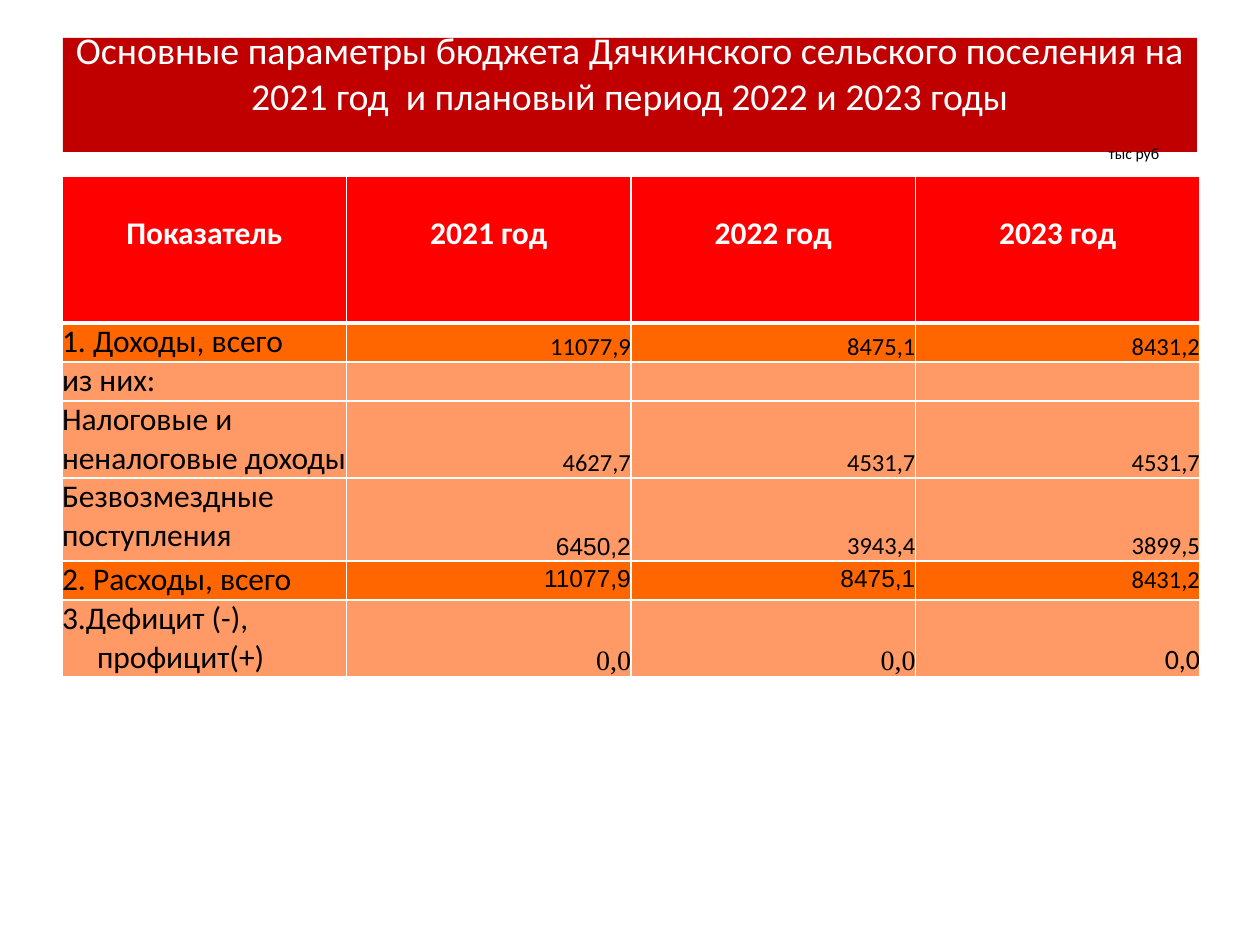
from lxml.etree import SubElement
from pptx import Presentation
from pptx.dml.color import RGBColor
from pptx.enum.shapes import MSO_SHAPE
from pptx.enum.text import MSO_ANCHOR, PP_ALIGN
from pptx.oxml.ns import qn
from pptx.util import Pt

EMU_PER_PX = 914400 / 126
COLORS = {
    "title": "C00000",
    "header": "FF0000",
    "total": "FF6600",
    "detail": "FF9966",
    "white": "FFFFFF",
    "black": "000000",
}


def px(length):
    return round(length * EMU_PER_PX)


def add_span(paragraph, text, size, color, font="Calibri", bold=False):
    span = paragraph.add_run()
    span.text = text
    span.font.size = Pt(size)
    span.font.name = font
    span.font.bold = bold
    span.font.color.rgb = RGBColor.from_string(COLORS[color])


deck = Presentation()
deck.slide_width, deck.slide_height = px(1260), px(945)
page = deck.slides.add_slide(deck.slide_layouts[6])

# Title banner with the unit of measure
banner = page.shapes.add_shape(MSO_SHAPE.RECTANGLE, px(63), px(38), px(1134), px(114))
banner.shadow.inherit = False
banner.fill.solid()
banner.fill.fore_color.rgb = RGBColor.from_string(COLORS["title"])
banner.line.fill.background()
frame = banner.text_frame
frame.word_wrap = True
frame.vertical_anchor = MSO_ANCHOR.MIDDLE
frame.margin_left = frame.margin_right = px(12)
title = frame.paragraphs[0]
title.alignment = PP_ALIGN.CENTER
add_span(title, "Основные параметры бюджета Дячкинского сельского поселения "
         "на 2021 год  и плановый период 2022 и 2023 годы", 21.6, "white")
unit = frame.add_paragraph()
unit.alignment = PP_ALIGN.CENTER
unit.space_before = Pt(15)
unit._p.get_or_add_pPr().set("marL", str(px(1008)))
add_span(unit, "тыс руб", 9, "black")

# Budget table: label, values, fill, value fonts, value size
HEADINGS = ["Показатель", "2021 год", "2022 год", "2023 год"]
CALIBRI = ["Calibri"] * 3
BUDGET = [
    ("1. Доходы, всего", ["11077,9", "8475,1", "8431,2"], "total", CALIBRI, 14),
    ("из них:", [], "detail", CALIBRI, 14),
    ("Налоговые и неналоговые доходы", ["4627,7", "4531,7", "4531,7"],
     "detail", CALIBRI, 14),
    ("Безвозмездные поступления", ["6450,2", "3943,4", "3899,5"],
     "detail", ["Arial", "Calibri", "Calibri"], 14),
    ("2. Расходы, всего", ["11077,9", "8475,1", "8431,2"],
     "total", ["Arial", "Arial", "Calibri"], 14),
    ("3.Дефицит (-),\nпрофицит(+)", ["0,0", "0,0", "0,0"],
     "detail", ["Times New Roman", "Times New Roman", "Calibri"], 16),
]
ROW_HEIGHTS = [147, 39, 39, 77, 83, 39, 76]

table = page.shapes.add_table(len(ROW_HEIGHTS), len(HEADINGS), px(62), px(176),
                              px(1138), px(sum(ROW_HEIGHTS))).table
for row, height in zip(table.rows, ROW_HEIGHTS):
    row.height = px(height)

for column, heading in enumerate(HEADINGS):
    cell = table.cell(0, column)
    paragraph = cell.text_frame.paragraphs[0]
    paragraph.alignment = PP_ALIGN.CENTER
    add_span(paragraph, heading, 18, "white", bold=True)

for row, (label, values, fill, fonts, size) in enumerate(BUDGET, start=1):
    frame = table.cell(row, 0).text_frame
    for index, line in enumerate(label.split("\n")):
        paragraph = frame.add_paragraph() if index else frame.paragraphs[0]
        if index:
            paragraph._p.get_or_add_pPr().set("marL", str(px(35)))
        add_span(paragraph, line, 18, "black")
    for column, (value, font) in enumerate(zip(values, fonts), start=1):
        cell = table.cell(row, column)
        if not label.startswith("2."):
            cell.vertical_anchor = MSO_ANCHOR.BOTTOM
        paragraph = cell.text_frame.paragraphs[0]
        paragraph.alignment = PP_ALIGN.RIGHT
        paragraph.line_spacing = 1.15
        add_span(paragraph, value, size, "black", font)

# Insets, borders and fills of every cell
fills = ["header"] + [entry[2] for entry in BUDGET]
for row, fill in enumerate(fills):
    for column in range(len(HEADINGS)):
        cell = table.cell(row, column)
        cell.margin_left = cell.margin_right = cell.margin_bottom = 0
        cell.margin_top = 0 if row else px(38)
        properties = cell._tc.get_or_add_tcPr()
        for side in ("lnL", "lnR", "lnT", "lnB"):
            under_header = (row, side) in ((0, "lnB"), (1, "lnT"))
            border = SubElement(properties, qn(f"a:{side}"),
                                w=str(Pt(3 if under_header else 1)))
            paint = SubElement(border, qn("a:solidFill"))
            SubElement(paint, qn("a:srgbClr"), val=COLORS["white"])
        cell.fill.solid()
        cell.fill.fore_color.rgb = RGBColor.from_string(COLORS[fill])

deck.save("out.pptx")
